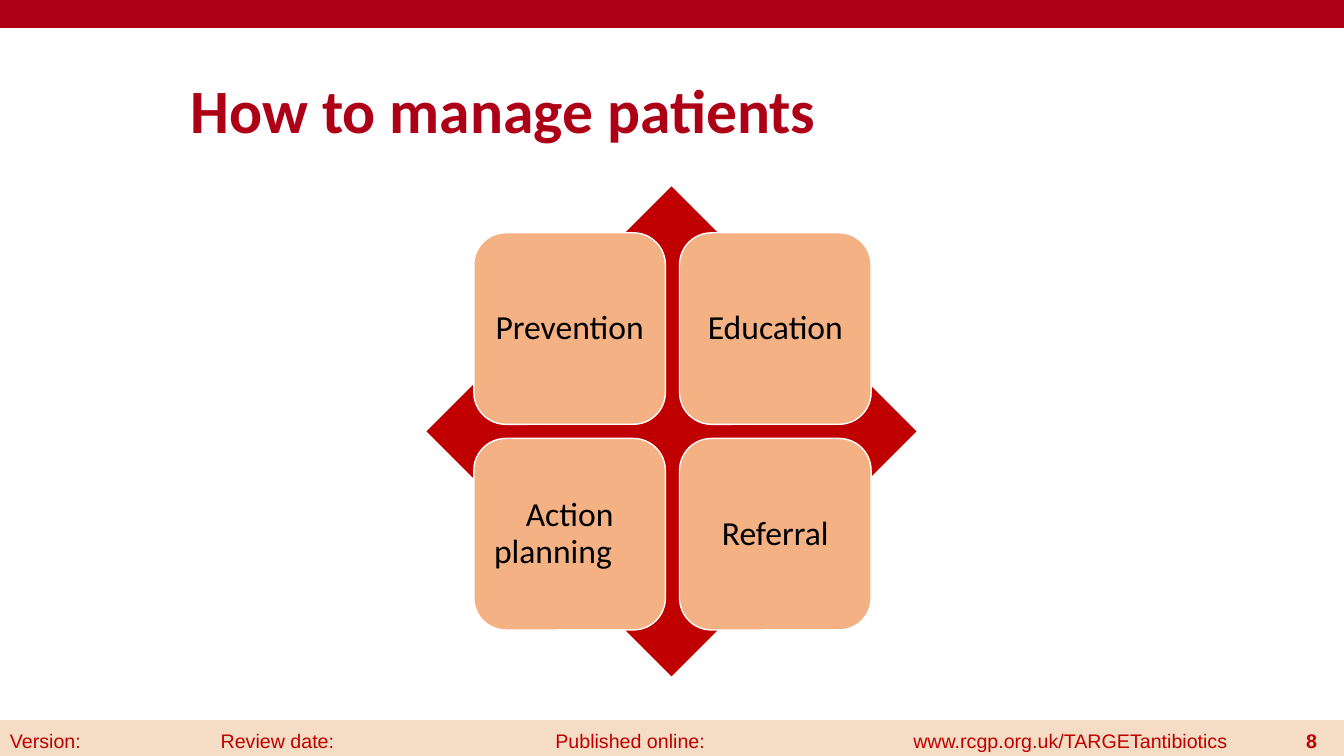
"""Build the slide on how to manage patients."""
import pptx
import pptx.util
from pptx.dml.color import RGBColor
from pptx.enum.shapes import MSO_SHAPE
from pptx.enum.text import MSO_ANCHOR, PP_ALIGN
from pptx.util import Inches

COLOURS = {
    "band": "AD0016",
    "footer": "F4DDC4",
    "red": "C00000",
    "tile": "F4B183",
    "white": "FFFFFF",
    "black": "000000",
}


def rgb(name):
    """Return the named colour."""
    return RGBColor.from_string(COLOURS[name])


def add_block(slide, kind, left, top, width, height, fill, outline=None):
    """Add a filled shape with an optional one-point outline."""
    block = slide.shapes.add_shape(
        kind, Inches(left), Inches(top), Inches(width), Inches(height))
    block.shadow.inherit = False
    block.fill.solid()
    block.fill.fore_color.rgb = rgb(fill)
    if outline:
        block.line.color.rgb = rgb(outline)
        block.line.width = pptx.util.Pt(1)
    else:
        block.line.fill.background()
    return block


def write(frame, words, size, font, colour, bold=False, align=PP_ALIGN.LEFT):
    """Write one styled paragraph and return it."""
    frame.word_wrap = True
    paragraph = frame.paragraphs[0]
    paragraph.text = words
    paragraph.alignment = align
    paragraph.font.size = pptx.util.Pt(size)
    paragraph.font.name = font
    paragraph.font.bold = bold
    paragraph.font.color.rgb = rgb(colour)
    return paragraph


def add_label(slide, left, top, width, height, words, *style, **options):
    """Add a text box and return its frame."""
    label = slide.shapes.add_textbox(
        Inches(left), Inches(top), Inches(width), Inches(height))
    write(label.text_frame, words, *style, **options)
    return label.text_frame


def add_tile(slide, left, top, words):
    """Add one rounded tile with its centred topic."""
    tile = add_block(slide, MSO_SHAPE.ROUNDED_RECTANGLE,
                     left, top, 1.9, 1.9, "tile", "white")
    frame = tile.text_frame
    frame.margin_left = frame.margin_right = Inches(0.1)
    frame.margin_top = frame.margin_bottom = Inches(0.1)
    frame.vertical_anchor = MSO_ANCHOR.MIDDLE
    topic = write(frame, words, 24, "Calibri", "black", align=PP_ALIGN.CENTER)
    topic.line_spacing = 0.9


def add_footer(slide):
    """Add the footer band with its details and page number."""
    add_block(slide, MSO_SHAPE.RECTANGLE, 0, 7.15, 13.33, 0.4, "footer", "footer")
    details = [
        (0, 0.91, "Version:"),
        (2.09, 1.66, "Review date:"),
        (5.41, 1.76, "Published online:"),
        (8.96, 3.64, "www.rcgp.org.uk/TARGETantibiotics"),
    ]
    for left, width, words in details:
        add_label(slide, left, 7.18, width, 0.4, words, 14, "Arial", "red")
    add_label(slide, 12.58, 7.18, 0.58, 0.4, "8", 14, "Arial", "red",
              bold=True, align=PP_ALIGN.RIGHT)


def main():
    """Build and save the slide."""
    deck = pptx.Presentation()
    deck.slide_width, deck.slide_height = Inches(13.33), Inches(7.5)
    slide = deck.slides.add_slide(deck.slide_layouts[6])

    add_footer(slide)
    add_block(slide, MSO_SHAPE.RECTANGLE, 0, -0.01, 13.33, 0.28, "band", "band")
    title = add_label(slide, 1.79, 0.4, 10.62, 1.45, "How to manage patients",
                      44, "Calibri", "band", bold=True)
    title.vertical_anchor = MSO_ANCHOR.MIDDLE
    title.paragraphs[0].line_spacing = 0.9

    add_block(slide, MSO_SHAPE.DIAMOND, 4.23, 1.85, 4.86, 4.86, "red")
    topics = ["Prevention", "Education", "Action planning\t", "Referral"]
    for index, topic in enumerate(topics):
        row, column = divmod(index, 2)
        add_tile(slide, 4.7 + 2.04 * column, 2.31 + 2.04 * row, topic)

    deck.save("out.pptx")


if __name__ == "__main__":
    main()
